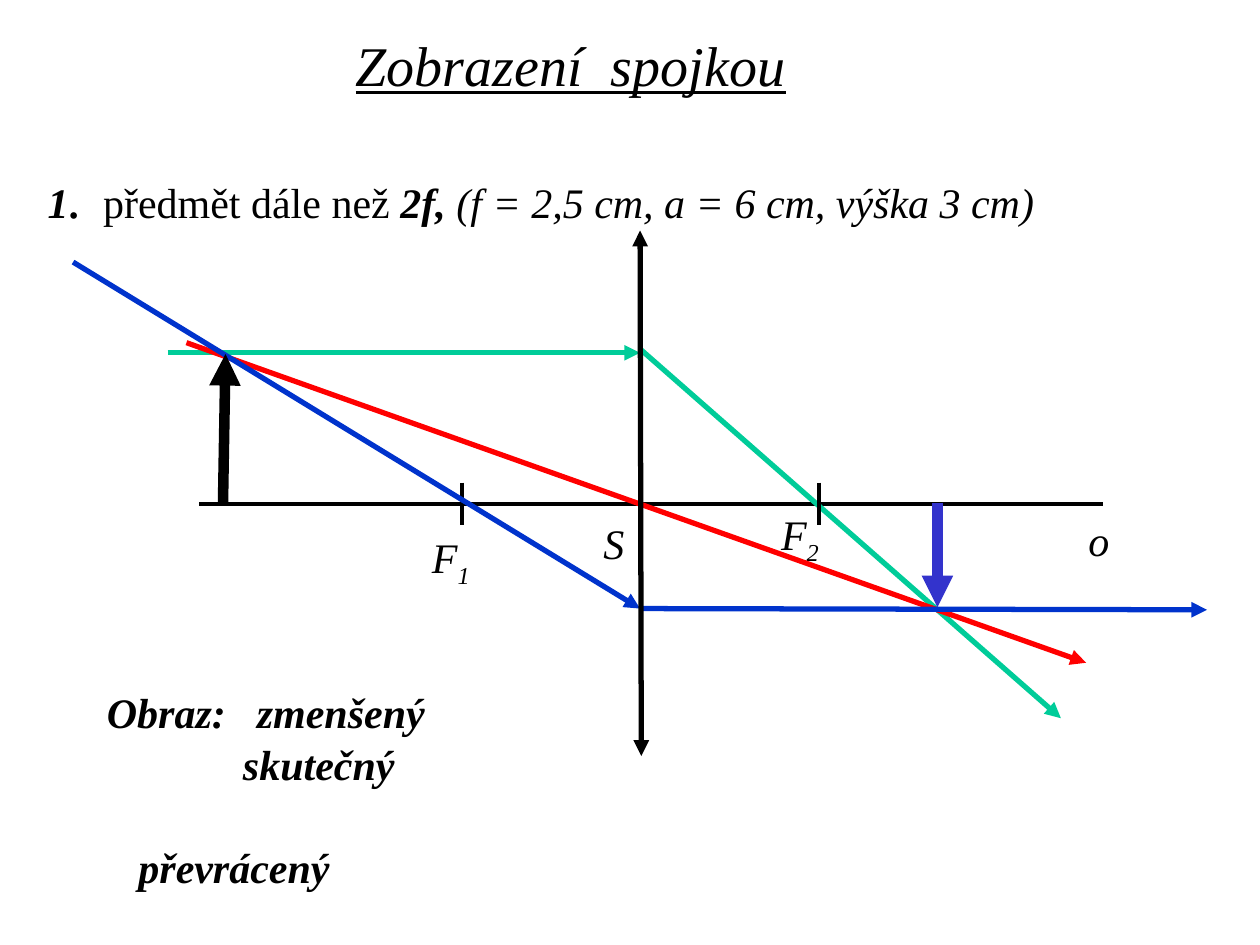
from lxml import etree
from pptx import Presentation
from pptx import util as u
from pptx.dml.color import RGBColor
from pptx.enum import shapes, text
from pptx.oxml.ns import qn

COLORS = {
    "ink": "000000",
    "parallel": "00CC99",
    "central": "FF0000",
    "focal": "0033CC",
    "image": "3333CC",
}


class LensSlide:
    font_name = "Times New Roman"
    body_size = 24

    def __init__(self, slide):
        self.slide = slide

    def line(self, start, end, color="ink", width=3, head=False, tail=False):
        points = [u.Inches(v) for v in (*start, *end)]
        line = self.slide.shapes.add_connector(shapes.MSO_CONNECTOR.STRAIGHT, *points)
        line.line.color.rgb = RGBColor.from_string(COLORS[color])
        line.line.width = u.Pt(width)
        outline = line.line._get_or_add_ln()
        for tag, wanted in (("a:headEnd", head), ("a:tailEnd", tail)):
            if wanted:
                etree.SubElement(outline, qn(tag), type="triangle")
        etree.SubElement(line._element.spPr, qn("a:effectLst"))

    def box(self, left, top, width, height, anchor=text.MSO_ANCHOR.TOP):
        area = [u.Inches(v) for v in (left, top, width, height)]
        frame = self.slide.shapes.add_textbox(*area).text_frame
        frame.word_wrap = True
        frame.vertical_anchor = anchor
        return frame

    def style(self, paragraph, size=body_size, bold=None, italic=True):
        font = paragraph.font
        font.name = self.font_name
        font.size = u.Pt(size)
        font.bold = bold
        font.italic = italic
        font.color.rgb = RGBColor.from_string(COLORS["ink"])

    def tab_stop(self, paragraph, position):
        properties = paragraph._p.get_or_add_pPr()
        stops = etree.Element(qn("a:tabLst"))
        etree.SubElement(stops, qn("a:tab"), pos=str(u.Inches(position)), algn="l")
        properties.insert_element_before(stops, "a:defRPr", "a:extLst")

    def label(self, area, letter, index=None, spacing=None):
        paragraph = self.box(*area).paragraphs[0]
        self.style(paragraph)
        paragraph.line_spacing = spacing
        paragraph.add_run().text = letter
        if index:
            subscript = paragraph.add_run()
            subscript.text = index
            subscript._r.get_or_add_rPr().set("baseline", "-25000")

    def heading(self):
        frame = self.box(0.28, 0.29, 8.5, 1.49, text.MSO_ANCHOR.MIDDLE)
        title = frame.paragraphs[0]
        title.text = "Zobrazení  spojkou"
        title.alignment = text.PP_ALIGN.CENTER
        self.style(title, 32)
        title.font.underline = True

        task = frame.add_paragraph()
        task.space_before = u.Pt(37)
        self.style(task, italic=None)
        self.tab_stop(task, 0.44)
        for words, size, bold, italic in (
            ("1", 24, True, True),
            (".", 32, False, True),
            ("\tpředmět dále než ", 24, False, False),
            ("2f, ", 24, True, True),
            ("(f = 2,5 cm, a = 6 cm, výška 3 cm)", 24, False, True),
        ):
            run = task.add_run()
            run.text = words
            run.font.size = u.Pt(size)
            run.font.bold = bold
            run.font.italic = italic

    def result(self):
        frame = self.box(0.75, 5.4, 3.08, 1.72)
        for number, (words, indent, gap) in enumerate((
            ("Obraz:\tzmenšený", 0, 0),
            ("skutečný", 1.08, 1),
            ("převrácený", 0.25, 30),
        )):
            paragraph = frame.add_paragraph() if number else frame.paragraphs[0]
            paragraph.text = words
            paragraph.space_before = u.Pt(gap)
            self.style(paragraph, bold=True)
            paragraph._p.get_or_add_pPr().set("marL", str(u.Inches(indent)))
            if "\t" in words:
                self.tab_stop(paragraph, 1.19)


def main():
    deck = Presentation()
    deck.slide_width, deck.slide_height = u.Inches(10), u.Inches(7.5)
    lens = LensSlide(deck.slides.add_slide(deck.slide_layouts[6]))
    axis_y, lens_x, exit_y = 4, 5.08, 4.83

    lens.heading()
    lens.line((1.58, axis_y), (8.75, axis_y), width=2.25)
    lens.line((1.33, 2.8), (lens_x, 2.8), "parallel", tail=True)
    lens.line((lens_x, 2.77), (8.42, 5.7), "parallel", tail=True)
    for focus_x in (6.5, 3.67):
        lens.line((focus_x, axis_y - 0.17), (focus_x, axis_y + 0.17), width=2.25)
    lens.label((3.33, 4.17, 0.73, 0.51), "F", "1")
    lens.label((6.1, 3.99, 0.79, 0.51), "F", "2")
    lens.line((1.48, 2.72), (8.62, 5.26), "central", tail=True)
    lens.line((0.58, 2.08), (lens_x, exit_y), "focal", tail=True)
    lens.line((lens_x, exit_y), (9.58, 4.84), "focal", tail=True)
    lens.line((1.77, axis_y), (1.79, 2.81), width=6, tail=True)
    lens.line((7.44, 3.99), (7.44, 4.82), "image", 6, tail=True)
    lens.result()
    lens.line((lens_x, 1.83), (5.09, 6), head=True, tail=True)
    lens.label((8.54, 4.06, 0.39, 0.48), "o", spacing=0.95)
    lens.label((4.69, 4.06, 0.33, 0.5), "S")
    deck.save("out.pptx")


if __name__ == "__main__":
    main()
